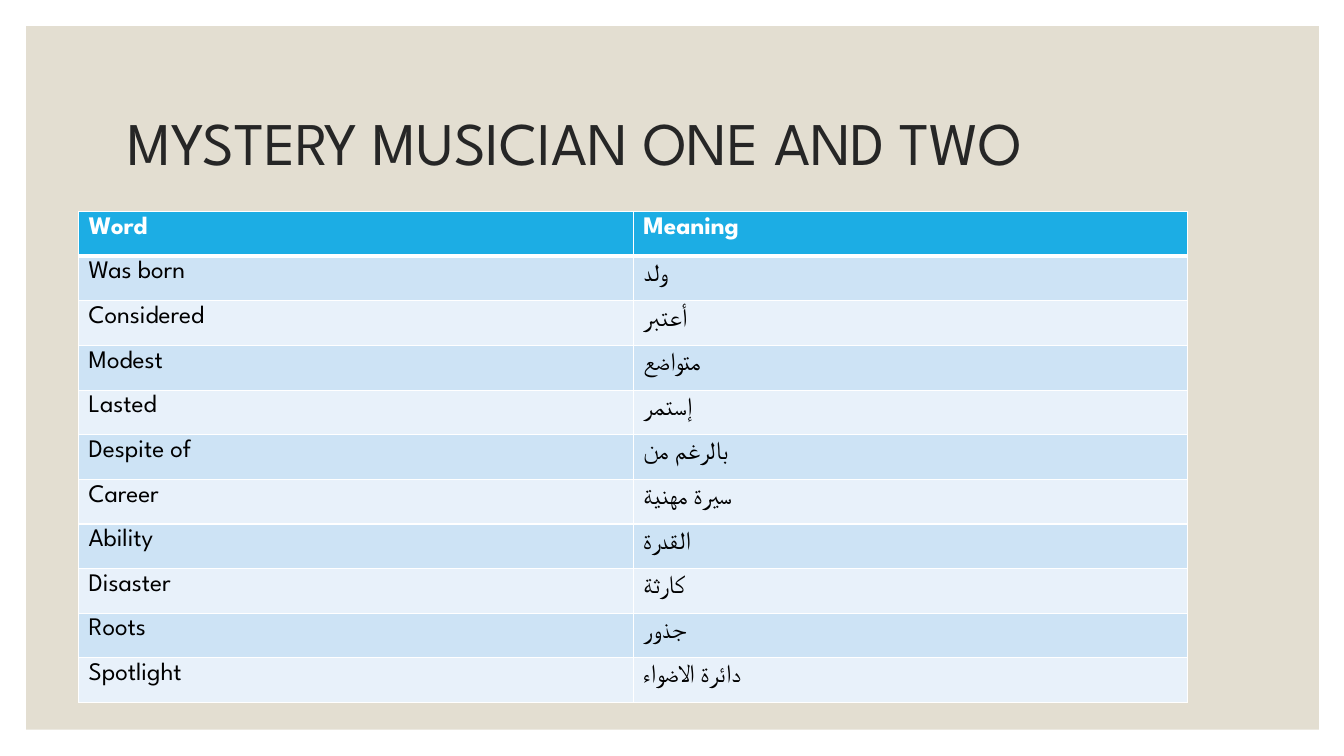
"""Build a vocabulary slide with a two-column word table."""
from dataclasses import dataclass

from lxml.etree import SubElement as Sub
from pptx import Presentation
from pptx.dml.color import RGBColor as Rgb
from pptx.enum.shapes import MSO_SHAPE as Kind
from pptx.enum.text import MSO_ANCHOR as Anchor
from pptx.oxml.ns import qn
from pptx.slide import Slide
from pptx.table import _Cell as Cell
from pptx.text.text import _Paragraph as Para
from pptx.util import Inches, Pt


@dataclass(frozen=True)
class Theme:
    """Colours, font and type sizes."""
    font: str = "League Spartan"
    sand: str = "E3DED1"
    ink: str = "262626"
    head: str = "1CADE4"
    bands: tuple[str, str] = ("CDE3F5", "E8F1FA")
    white: str = "FFFFFF"
    black: str = "000000"
    title: float = 43.2
    body: float = 18


@dataclass(frozen=True)
class Entry:
    """One word and its meaning."""
    word: str
    sense: str


LOOK = Theme()
HEAD = Entry("Word", "Meaning")
WORDS = [
    Entry("Was born", "ولد"),
    Entry("Considered", "أعتبر"),
    Entry("Modest", "متواضع"),
    Entry("Lasted", "إستمر"),
    Entry("Despite of", "بالرغم من"),
    Entry("Career", "سيرة مهنية"),
    Entry("Ability", "القدرة"),
    Entry("Disaster", "كارثة"),
    Entry("Roots", "جذور"),
    Entry("Spotlight", "دائرة الاضواء"),
]


def add_run(para: Para, text: str, size: float, color: str, bold: bool = False) -> None:
    """Add one styled run to a paragraph."""
    run = para.add_run()
    run.text = text
    run.font.name = LOOK.font
    run.font.size = Pt(size)
    run.font.bold = bold
    run.font.color.rgb = Rgb.from_string(color)


def add_panel(slide: Slide) -> None:
    """Draw the sand panel behind the content."""
    panel = slide.shapes.add_shape(
        Kind.RECTANGLE, Inches(0.26), Inches(0.26), Inches(12.82), Inches(6.98))
    panel.shadow.inherit = False
    panel.fill.solid()
    panel.fill.fore_color.rgb = Rgb.from_string(LOOK.sand)
    panel.line.fill.background()


def add_title(slide: Slide, text: str) -> None:
    """Write the slide title."""
    box = slide.shapes.add_textbox(Inches(1.17), Inches(0.7), Inches(11), Inches(1.5))
    frame = box.text_frame
    frame.word_wrap = True
    frame.vertical_anchor = Anchor.MIDDLE
    para = frame.paragraphs[0]
    para.line_spacing = 0.9
    add_run(para, text, LOOK.title, LOOK.ink)


def add_edge(cell: Cell, side: str, width: float) -> None:
    """Give one side of a cell a white border."""
    line = Sub(cell._tc.get_or_add_tcPr(), qn(f"a:ln{side}"), w=str(Pt(width)))
    fill = Sub(line, qn("a:solidFill"))
    Sub(fill, qn("a:srgbClr"), val=LOOK.white)


def fill_cell(cell: Cell, text: str, row: int) -> None:
    """Set borders, fill and text of a cell by its row."""
    top = row == 0
    thick = {(0, "B"), (1, "T")}
    for side in "LRTB":
        add_edge(cell, side, 3 if (row, side) in thick else 1)
    cell.fill.solid()
    shade = LOOK.head if top else LOOK.bands[(row - 1) % 2]
    cell.fill.fore_color.rgb = Rgb.from_string(shade)
    color = LOOK.white if top else LOOK.black
    add_run(cell.text_frame.paragraphs[0], text, LOOK.body, color, top)


def add_words(slide: Slide, rows: list[Entry]) -> None:
    """Draw the table of words and meanings."""
    high = Inches(4.87)
    table = slide.shapes.add_table(
        len(rows), 2, Inches(0.78), Inches(2.1), Inches(11), high).table
    for row, entry in enumerate(rows):
        table.rows[row].height = high // len(rows)
        for col, text in enumerate((entry.word, entry.sense)):
            fill_cell(table.cell(row, col), text, row)


def main() -> None:
    """Build and save the deck."""
    deck = Presentation()
    deck.slide_width, deck.slide_height = Inches(13.33), Inches(7.5)
    slide = deck.slides.add_slide(deck.slide_layouts[6])
    add_panel(slide)
    add_title(slide, "MYSTERY MUSICIAN ONE AND TWO")
    add_words(slide, [HEAD, *WORDS])
    deck.save("out.pptx")


if __name__ == "__main__":
    main()
